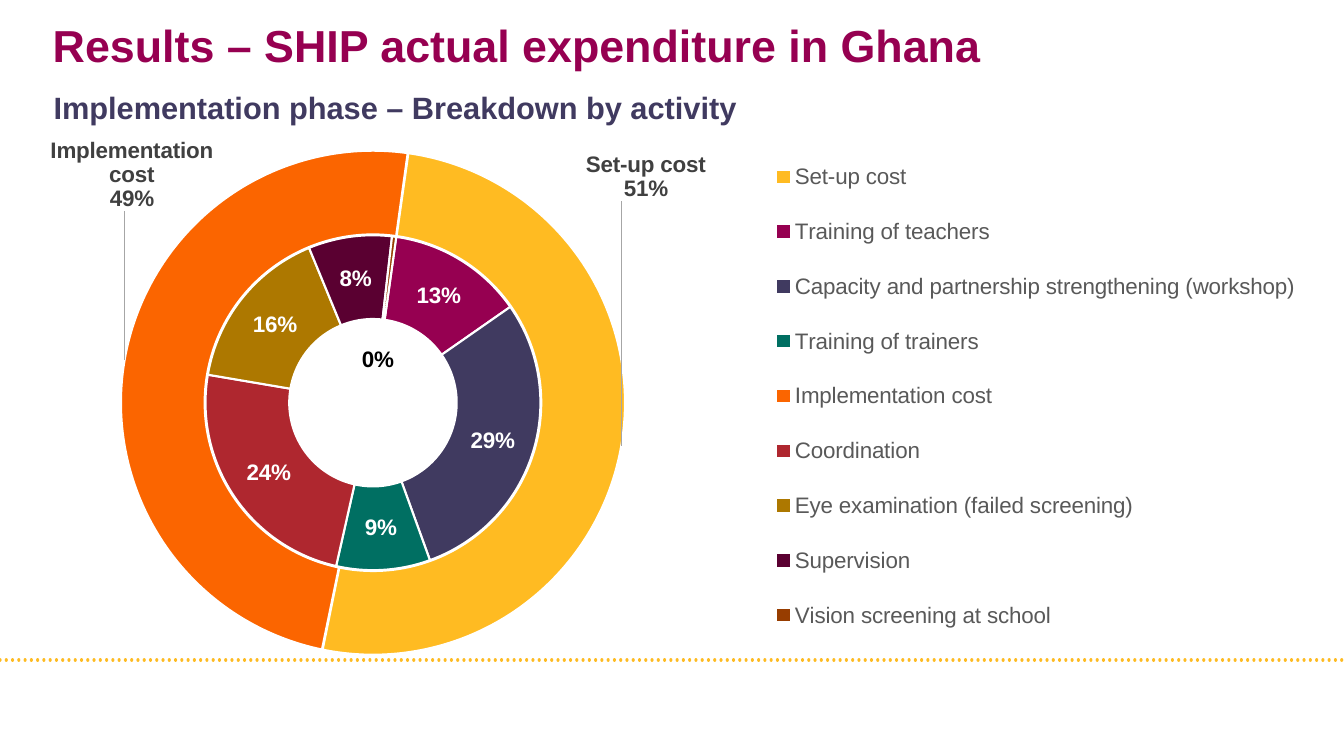
from dataclasses import dataclass

from lxml import etree
from pptx import Presentation
from pptx import util as u
from pptx.chart.data import CategoryChartData
from pptx.dml.color import RGBColor
from pptx.enum import chart as ch, dml, shapes, text
from pptx.oxml.ns import qn


@dataclass(frozen=True)
class Theme:
    font: str = "Arial"
    title: str = "960051"
    subtitle: str = "403A60"
    rule: str = "FEBB22"
    legend: str = "595959"
    callout: str = "404040"
    leader: str = "A6A6A6"
    white: str = "FFFFFF"
    black: str = "000000"
    title_size: int = 32
    subtitle_size: int = 22
    chart_size: int = 16


T = Theme()

# category, colour, inner ring, outer ring
COSTS = [
    ("Set-up cost", "FFBB22", None, 51),
    ("Training of teachers", "960051", 13, None),
    ("Capacity and partnership strengthening (workshop)", "403A60", 29, None),
    ("Training of trainers", "006F62", 9, None),
    ("Implementation cost", "FB6500", None, 49),
    ("Coordination", "AF272F", 24, None),
    ("Eye examination (failed screening)", "AD7800", 16, None),
    ("Supervision", "5A0031", 8, None),
    # a zero slice gets no label; 0.4 draws the thin slice and rounds to 0%
    ("Vision screening at school", "973D00", 0.4, None),
]
SETUP, IMPLEMENTATION, SCREENING = 0, 4, 8


def style(font, size, colour, bold=False):
    font.name, font.size, font.bold = T.font, u.Pt(size), bold
    font.color.rgb = RGBColor.from_string(colour)


def c_element(tag, **attrs):
    el = etree.Element(qn("c:" + tag))
    for name, value in attrs.items():
        el.set(name, str(value))
    return el


def set_layout(parent, at, box, **settings):
    """Place a chart part by lengths in cm, taken as shares of the chart's box."""
    for old in parent.findall(qn("c:layout")):
        parent.remove(old)
    layout = c_element("layout")
    manual = c_element("manualLayout")
    layout.append(manual)
    for tag, value in settings.items():
        if tag in ("x", "w"):
            value /= box[2]
        elif tag in ("y", "h"):
            value /= box[3]
        manual.append(c_element(tag, val=value))
    parent.insert(at, layout)


def add_heading(s, box, words, size, colour):
    tf = s.shapes.add_textbox(*map(u.Cm, box)).text_frame
    tf.word_wrap = True
    tf.vertical_anchor = text.MSO_ANCHOR.TOP
    tf.margin_left = tf.margin_right = tf.margin_top = tf.margin_bottom = 0
    r = tf.paragraphs[0].add_run()
    r.text = words
    style(r.font, size, colour, True)


def add_rule(s, left, top, width):
    rule = s.shapes.add_connector(shapes.MSO_CONNECTOR.STRAIGHT, u.Cm(left), u.Cm(top),
                                  u.Cm(left + width), u.Cm(top))
    rule.line.color.rgb = RGBColor.from_string(T.rule)
    rule.line.width = u.Pt(2.25)
    rule.line.dash_style = dml.MSO_LINE.ROUND_DOT
    rule._element.spPr.find(qn("a:ln")).set("cap", "rnd")
    etree.SubElement(rule._element.spPr, qn("a:effectLst"))


def style_ring(ring, label_colour, with_name):
    for i, (_, colour, *_) in enumerate(COSTS):
        fmt = ring.points[i].format
        fmt.fill.solid()
        fmt.fill.fore_color.rgb = RGBColor.from_string(colour)
        fmt.line.color.rgb = RGBColor.from_string(T.white)
        fmt.line.width = u.Pt(1.5)
    labels = ring.data_labels
    style(labels.font, T.chart_size, label_colour, True)
    labels.number_format, labels.number_format_is_linked = "0%", False
    labels.show_value = False
    labels.show_percentage = True
    labels.show_category_name = with_name


def add_leader_lines(ring):
    labels = ring._element.find(qn("c:dLbls"))
    for old in labels.findall(qn("c:showLeaderLines")):
        labels.remove(old)
    leaders = c_element("leaderLines")
    sp_pr = etree.SubElement(leaders, qn("c:spPr"))
    ln = etree.SubElement(sp_pr, qn("a:ln"), w=str(u.Pt(0.75)))
    fill = etree.SubElement(ln, qn("a:solidFill"))
    etree.SubElement(fill, qn("a:srgbClr"), val=T.leader)
    labels.extend([c_element("showLeaderLines", val=1), leaders])


def move_label(ring, i, box, dx, dy, colour, with_name):
    """Shift one label from its usual place by lengths in cm."""
    style(ring.points[i].data_label.font, T.chart_size, colour, True)
    label = ring._element.xpath(f"c:dLbls/c:dLbl[c:idx/@val='{i}']")[0]
    set_layout(label, 1, box, x=dx, y=dy)
    for tag, on in (("showVal", 0), ("showCatName", int(with_name)), ("showPercent", 1)):
        label.find(qn("c:" + tag)).set("val", str(on))
    if with_name:
        separator = c_element("separator")
        separator.text = "\n"
        label.append(separator)


def style_legend(chart, box):
    chart.has_legend = True
    legend = chart.legend
    legend.position = ch.XL_LEGEND_POSITION.RIGHT
    legend.include_in_layout = False
    style(legend.font, T.chart_size, T.legend)
    set_layout(legend._element, 1, box, xMode="edge", yMode="edge",
               x=17.91, y=0.05, w=13.85, h=13.2)


def add_cost_rings(s, box):
    names, _, inner_values, outer_values = zip(*COSTS)
    data = CategoryChartData()
    data.categories = names
    data.add_series("Activities", inner_values)
    data.add_series("Phases", outer_values)
    chart = s.shapes.add_chart(ch.XL_CHART_TYPE.DOUGHNUT, *map(u.Cm, box), data).chart
    chart.has_title = False
    style(chart.font, 10, T.black)
    plot = chart.plots[0]
    plot.vary_by_categories = True
    plot._element.find(qn("c:firstSliceAng")).set("val", "8")
    plot._element.find(qn("c:holeSize")).set("val", "28")
    set_layout(chart._chartSpace.chart.plotArea, 0, box, layoutTarget="inner",
               xMode="edge", yMode="edge", x=1.8, y=0.49, w=12.66, h=12.66)

    inner, outer = plot.series
    style_ring(inner, T.white, False)
    move_label(inner, SCREENING, box, -0.28, 2.04, T.black, False)
    style_ring(outer, T.callout, True)
    outer._element.find(qn("c:dPt")).addprevious(c_element("explosion", val=1))
    move_label(outer, SETUP, box, 1.66, -6.6, T.callout, True)
    move_label(outer, IMPLEMENTATION, box, -0.92, -4.85, T.callout, True)
    add_leader_lines(outer)
    style_legend(chart, box)


def main():
    prs = Presentation()
    prs.slide_width, prs.slide_height = u.Cm(33.87), u.Cm(19.05)
    s = prs.slides.add_slide(prs.slide_layouts[6])
    add_rule(s, 0, 16.63, 33.87)
    add_heading(s, (1.33, 0.45, 30.48, 1.78), "Results – SHIP actual expenditure in Ghana",
                T.title_size, T.title)
    add_heading(s, (1.35, 2.23, 30.53, 1.09), "Implementation phase – Breakdown by activity",
                T.subtitle_size, T.subtitle)
    add_cost_rings(s, (1.27, 3.33, 32.21, 13.54))
    prs.save("out.pptx")


if __name__ == "__main__":
    main()
